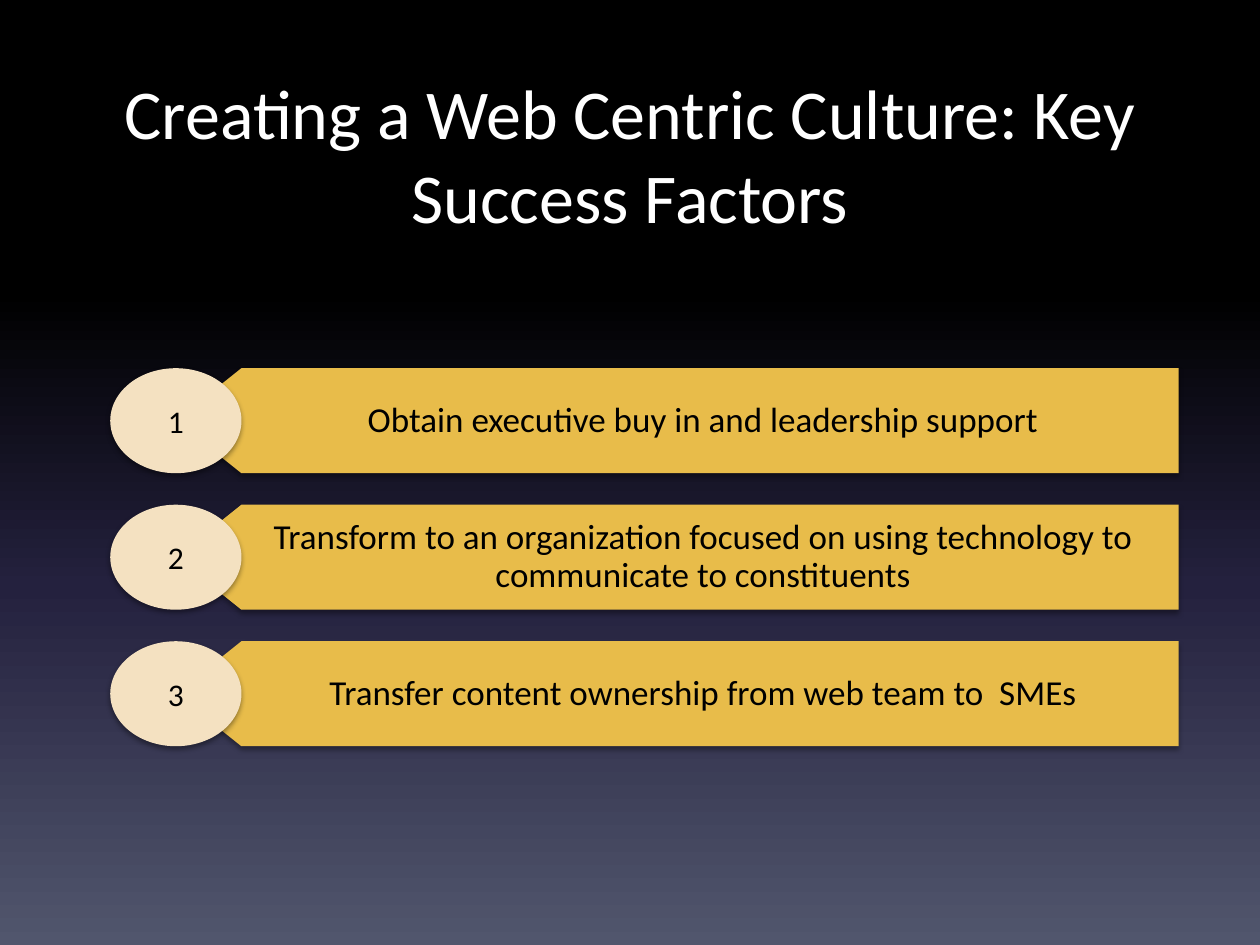
"""Build the slide on key success factors for a web centric culture."""
from lxml import etree
from pptx import Presentation
from pptx.dml.color import RGBColor
from pptx.enum import shapes, text
from pptx.oxml.ns import qn
from pptx.util import Pt


def rgb(value):
    return RGBColor.from_string(value)


def write(sp, content, size, color="000000", anchor=text.MSO_ANCHOR.MIDDLE,
          insets=(7.2, 3.6, 7.2, 3.6), spacing=None, after=0):
    tf = sp.text_frame
    tf.word_wrap = True
    tf.auto_size = text.MSO_AUTO_SIZE.NONE
    tf.vertical_anchor = anchor
    tf.margin_left, tf.margin_top, tf.margin_right, tf.margin_bottom = map(Pt, insets)
    p = tf.paragraphs[0]
    p.alignment = text.PP_ALIGN.CENTER
    p.line_spacing = spacing
    p.space_after = Pt(after)
    r = p.add_run()
    r.text = content
    r.font.name = "Calibri"
    r.font.size = Pt(size)
    r.font.color.rgb = rgb(color)


prs = Presentation()
prs.slide_width, prs.slide_height = Pt(720), Pt(540)
s = prs.slides.add_slide(prs.slide_layouts[5])

fill = s.background.fill
fill.gradient()
fill.gradient_angle = 270
stops = s.element.find(".//" + qn("a:gsLst"))
for stop in list(stops):
    stops.remove(stop)
for position, color in ((0, "000000"), (31, "000000"), (62, "24213E"), (100, "51566D")):
    stop = etree.SubElement(stops, qn("a:gs"), pos=str(position * 1000))
    etree.SubElement(stop, qn("a:srgbClr"), val=color)

title = s.shapes.title
title.left, title.top, title.width, title.height = Pt(36), Pt(36), Pt(648), Pt(90)
write(title, "Creating a Web Centric Culture: Key Success Factors", 40, "FFFFFF",
      anchor=text.MSO_ANCHOR.TOP)

factors = (
    "Obtain executive buy in and leadership support",
    "Transform to an organization focused on using technology to communicate to constituents",
    "Transfer content ownership from web team to  SMEs",
)
tip, shoulder, right = 100.5, 138, 673.5
height, pitch = 60, 78

for i, factor in enumerate(factors):
    top = 210.4 + i * pitch
    bottom = top + height
    outline = ((shoulder, bottom), (tip, top + height / 2), (shoulder, top), (right, top))
    builder = s.shapes.build_freeform(Pt(right), Pt(bottom))
    builder.add_line_segments([(Pt(x), Pt(y)) for x, y in outline], close=True)
    bar = builder.convert_to_shape()
    write(bar, factor, 20, insets=(36, 3.6, 6.5, 3.6), spacing=0.9, after=7)

    number = s.shapes.add_shape(shapes.MSO_SHAPE.OVAL, Pt(63), Pt(top), Pt(75), Pt(height))
    write(number, str(i + 1), 18)

    for sp, color, alpha, distance in ((bar, "E8BC4A", 35, 1.8), (number, "F4E1C1", 38, 1.6)):
        sp.fill.solid()
        sp.fill.fore_color.rgb = rgb(color)
        sp.line.fill.background()
        sp.shadow.inherit = False
        effects = sp.element.spPr.find(qn("a:effectLst"))
        shadow = etree.SubElement(effects, qn("a:outerShdw"), blurRad=str(Pt(3.1)),
                                  dist=str(Pt(distance)), dir="5400000", rotWithShape="0")
        black = etree.SubElement(shadow, qn("a:srgbClr"), val="000000")
        etree.SubElement(black, qn("a:alpha"), val=str(alpha * 1000))

prs.save("out.pptx")
